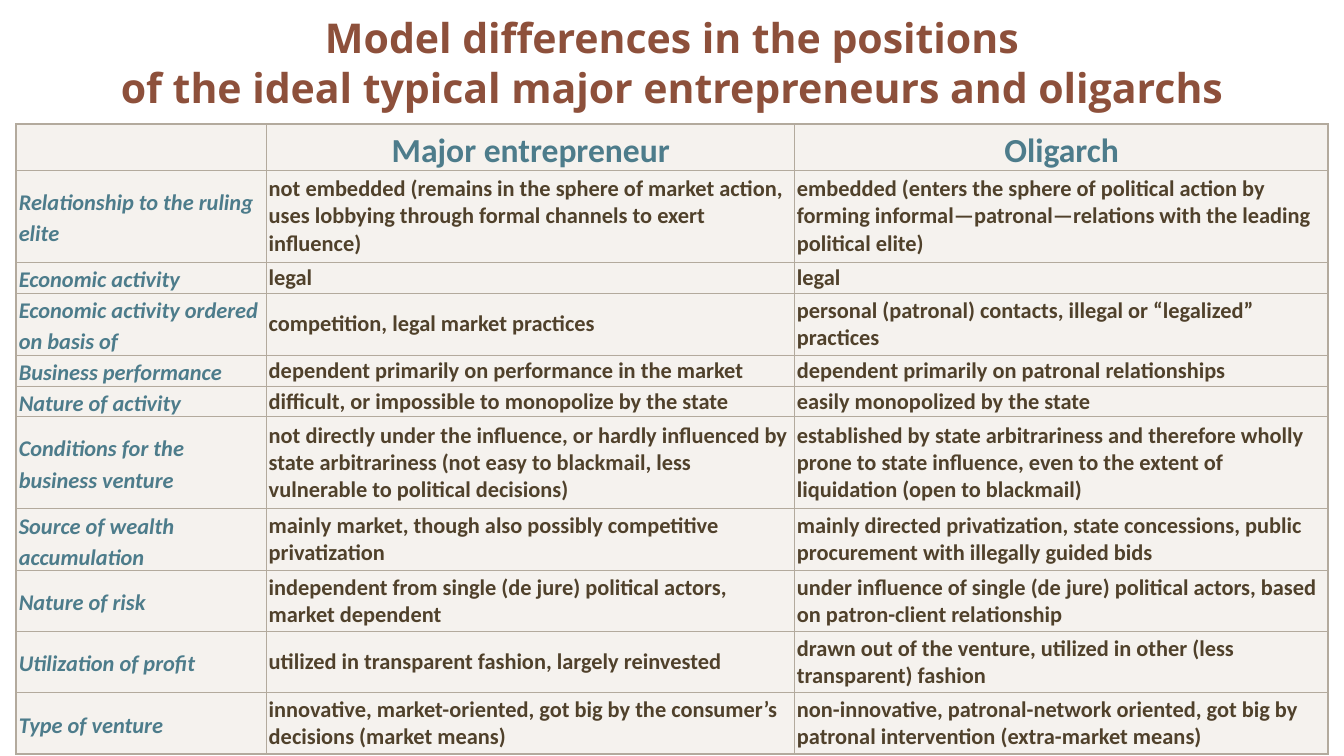
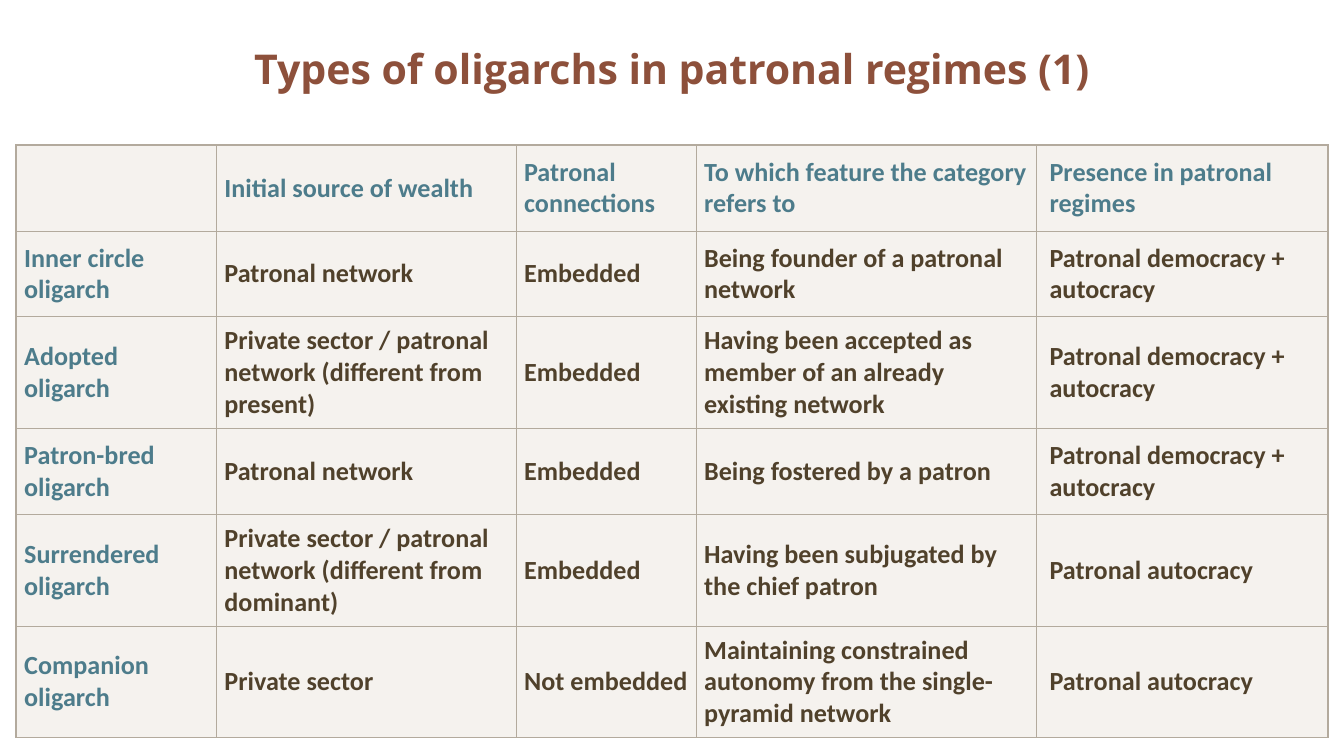
import dataclasses
import typing

import lxml.etree
import pptx
import pptx.dml.color
import pptx.enum.text
import pptx.oxml.ns
import pptx.util

SLIDE_WIDTH = pptx.util.Inches(10)
SLIDE_HEIGHT = pptx.util.Inches(5.625)
SIDE_SHARE = 0.012
MIDDLE = pptx.enum.text.MSO_ANCHOR.MIDDLE
CENTER = pptx.enum.text.PP_ALIGN.CENTER
LEFT = pptx.enum.text.PP_ALIGN.LEFT

COLORS = {
    "title": "8D503B",
    "heading": "4D7C8B",
    "body": "50412B",
    "cell": "EFEAE4",
    "border": "B3AA9D",
}
CELL_OPACITY = 0.6
OUTER_BORDER = pptx.util.Pt(1)
INNER_BORDER = pptx.util.Pt(0.5)

TITLE_FONT = {"name": "Open Sans", "size": pptx.util.Pt(22), "bold": True}
CELL_FONT = {"name": "Calibri", "bold": True}


@dataclasses.dataclass(frozen=True)
class Insets:
    """Cell margins and paragraph indent, in inches."""
    left: float
    top: float
    right: float
    bottom: float
    indent: float = 0

    def margins(self) -> dict[str, int]:
        return {
            f"margin_{side}": pptx.util.Inches(getattr(self, side))
            for side in ("left", "top", "right", "bottom")
        }


@dataclasses.dataclass(frozen=True)
class CellStyle:
    color: str
    size: float
    italic: bool = False
    alignment: typing.Any = LEFT
    line_spacing: float = 1.0


@dataclasses.dataclass(frozen=True)
class TableSlide:
    """A title over a table; columns and rows are counted in grid units."""
    title: list[str]
    title_height: float
    table_top: float
    table_height: float
    columns: list[int]
    rows: list[float]
    cells: list[list[str]]
    header: CellStyle
    label: CellStyle
    body: CellStyle
    insets: Insets
    last_insets: Insets


DIFFERENCES = TableSlide(
    title=["Model differences in the positions",
           "of the ideal typical major entrepreneurs and oligarchs"],
    title_height=0.164,
    table_top=0.164,
    table_height=0.83,
    columns=[186, 393, 397],
    rows=[1.5, 3, 1, 2, 1, 1, 3, 2, 2, 2, 2],
    cells=[
        ["", "Major entrepreneur", "Oligarch"],
        ["Relationship to the ruling elite",
         "not embedded (remains in the sphere of market action, uses lobbying "
         "through formal channels to exert influence)",
         "embedded (enters the sphere of political action by forming "
         "informal—patronal—relations with the leading political elite)"],
        ["Economic activity", "legal", "legal"],
        ["Economic activity ordered on basis of",
         "competition, legal market practices",
         "personal (patronal) contacts, illegal or “legalized” practices"],
        ["Business performance",
         "dependent primarily on performance in the market",
         "dependent primarily on patronal relationships"],
        ["Nature of activity",
         "difficult, or impossible to monopolize by the state",
         "easily monopolized by the state"],
        ["Conditions for the business venture",
         "not directly under the influence, or hardly influenced by state "
         "arbitrariness (not easy to blackmail, less vulnerable to political "
         "decisions)",
         "established by state arbitrariness and therefore wholly prone to "
         "state influence, even to the extent of liquidation (open to "
         "blackmail)"],
        ["Source of wealth accumulation",
         "mainly market, though also possibly competitive privatization",
         "mainly directed privatization, state concessions, public "
         "procurement with illegally guided bids"],
        ["Nature of risk",
         "independent from single (de jure) political actors, market dependent",
         "under influence of single (de jure) political actors, based on "
         "patron-client relationship"],
        ["Utilization of profit",
         "utilized in transparent fashion, largely reinvested",
         "drawn out of the venture, utilized in other (less transparent) "
         "fashion"],
        ["Type of venture",
         "innovative, market-oriented, got big by the consumer’s decisions "
         "(market means)",
         "non-innovative, patronal-network oriented, got big by patronal "
         "intervention (extra-market means)"],
    ],
    header=CellStyle("heading", 18, alignment=CENTER, line_spacing=1.15),
    label=CellStyle("heading", 12, italic=True, line_spacing=1.15),
    body=CellStyle("body", 12),
    insets=Insets(0.02, 0, 0.01, 0),
    last_insets=Insets(0.02, 0, 0.01, 0),
)

TYPES = TableSlide(
    title=["Types of oligarchs in patronal regimes (1)"],
    title_height=0.18,
    table_top=0.192,
    table_height=0.784,
    columns=[149, 223, 134, 253, 217],
    rows=[10, 10, 13, 10, 13, 13],
    cells=[
        ["", "Initial source of wealth", "Patronal connections",
         "To which feature the category refers to",
         "Presence in patronal regimes"],
        ["Inner circle oligarch", "Patronal network", "Embedded",
         "Being founder of a patronal network",
         "Patronal democracy + autocracy"],
        ["Adopted oligarch",
         "Private sector / patronal network (different from present)",
         "Embedded",
         "Having been accepted as member of an already existing network",
         "Patronal democracy + autocracy"],
        ["Patron-bred oligarch", "Patronal network", "Embedded",
         "Being fostered by a patron", "Patronal democracy + autocracy"],
        ["Surrendered oligarch",
         "Private sector / patronal network (different from dominant)",
         "Embedded", "Having been subjugated by the chief patron",
         "Patronal autocracy"],
        ["Companion oligarch", "Private sector", "Not embedded",
         "Maintaining constrained autonomy from the single-pyramid network",
         "Patronal autocracy"],
    ],
    header=CellStyle("heading", 14),
    label=CellStyle("heading", 14),
    body=CellStyle("body", 14),
    insets=Insets(0.06, 0.03, 0.06, 0.03),
    last_insets=Insets(0, 0, 0, 0, indent=0.1),
)


def apply_format(target: typing.Any, values: dict[str, typing.Any]) -> None:
    for name, value in values.items():
        setattr(target, name, value)


def rgb(color: str) -> pptx.dml.color.RGBColor:
    return pptx.dml.color.RGBColor.from_string(COLORS[color])


def add_element(parent: typing.Any, tag: str, **attributes: str) -> typing.Any:
    return lxml.etree.SubElement(parent, pptx.oxml.ns.qn(tag), attributes)


def add_run(paragraph: typing.Any, text: str, color: str,
            values: dict[str, typing.Any]) -> None:
    run = paragraph.add_run()
    run.text = text
    apply_format(run.font, values)
    run.font.color.rgb = rgb(color)


def add_title(slide: typing.Any, lines: list[str], height: float) -> None:
    box = slide.shapes.add_textbox(
        int(SLIDE_WIDTH * SIDE_SHARE), 0,
        int(SLIDE_WIDTH * (1 - 2 * SIDE_SHARE)), int(SLIDE_HEIGHT * height))
    apply_format(box.text_frame, {"word_wrap": True, "vertical_anchor": MIDDLE})
    paragraph = box.text_frame.paragraphs[0]
    paragraph.alignment = CENTER
    for index, line in enumerate(lines):
        if index:
            paragraph.add_line_break()
        add_run(paragraph, line, "title", TITLE_FONT)


def paint_cell(cell: typing.Any, outer_sides: dict[str, bool]) -> None:
    """Fill the cell and rule its sides, heavier on the table's edge."""
    cell.fill.solid()
    cell.fill.fore_color.rgb = rgb("cell")
    properties = cell._tc.get_or_add_tcPr()
    fill_color = properties.find(".//" + pptx.oxml.ns.qn("a:srgbClr"))
    add_element(fill_color, "a:alpha", val=str(int(CELL_OPACITY * 100000)))
    for position, (side, is_outer) in enumerate(outer_sides.items()):
        width = OUTER_BORDER if is_outer else INNER_BORDER
        line = add_element(properties, f"a:ln{side}", w=str(int(width)))
        add_element(add_element(line, "a:solidFill"), "a:srgbClr",
                    val=COLORS["border"])
        properties.insert(position, line)


def write_cell(cell: typing.Any, text: str, style: CellStyle,
               insets: Insets) -> None:
    apply_format(cell, {"vertical_anchor": MIDDLE, **insets.margins()})
    if not text:
        return
    paragraph = cell.text_frame.paragraphs[0]
    apply_format(paragraph, {"alignment": style.alignment,
                             "line_spacing": style.line_spacing})
    if insets.indent:
        paragraph._p.get_or_add_pPr().set(
            "marL", str(int(pptx.util.Inches(insets.indent))))
    add_run(paragraph, text, style.color,
            {**CELL_FONT, "size": pptx.util.Pt(style.size),
             "italic": style.italic})


def add_table(slide: typing.Any, content: TableSlide) -> None:
    width = int(SLIDE_WIDTH * (1 - 2 * SIDE_SHARE))
    height = int(SLIDE_HEIGHT * content.table_height)
    last_row, last_column = len(content.rows) - 1, len(content.columns) - 1
    table = slide.shapes.add_table(
        last_row + 1, last_column + 1, int(SLIDE_WIDTH * SIDE_SHARE),
        int(SLIDE_HEIGHT * content.table_top), width, height).table
    apply_format(table, {"first_row": False, "horz_banding": False})
    for column, units in zip(table.columns, content.columns):
        column.width = int(width * units / sum(content.columns))
    for row, units in zip(table.rows, content.rows):
        row.height = int(height * units / sum(content.rows))

    for row_index, texts in enumerate(content.cells):
        for column_index, text in enumerate(texts):
            cell = table.cell(row_index, column_index)
            if row_index == 0:
                style = content.header
            else:
                style = content.body if column_index else content.label
            is_last = column_index == last_column
            write_cell(cell, text, style,
                       content.last_insets if is_last else content.insets)
            paint_cell(cell, {"L": column_index == 0, "R": is_last,
                              "T": row_index == 0, "B": row_index == last_row})


def main() -> None:
    presentation = pptx.Presentation()
    apply_format(presentation, {"slide_width": SLIDE_WIDTH,
                                "slide_height": SLIDE_HEIGHT})
    for content in (DIFFERENCES, TYPES):
        slide = presentation.slides.add_slide(presentation.slide_layouts[6])
        add_title(slide, content.title, content.title_height)
        add_table(slide, content)
    presentation.save("out.pptx")


if __name__ == "__main__":
    main()
